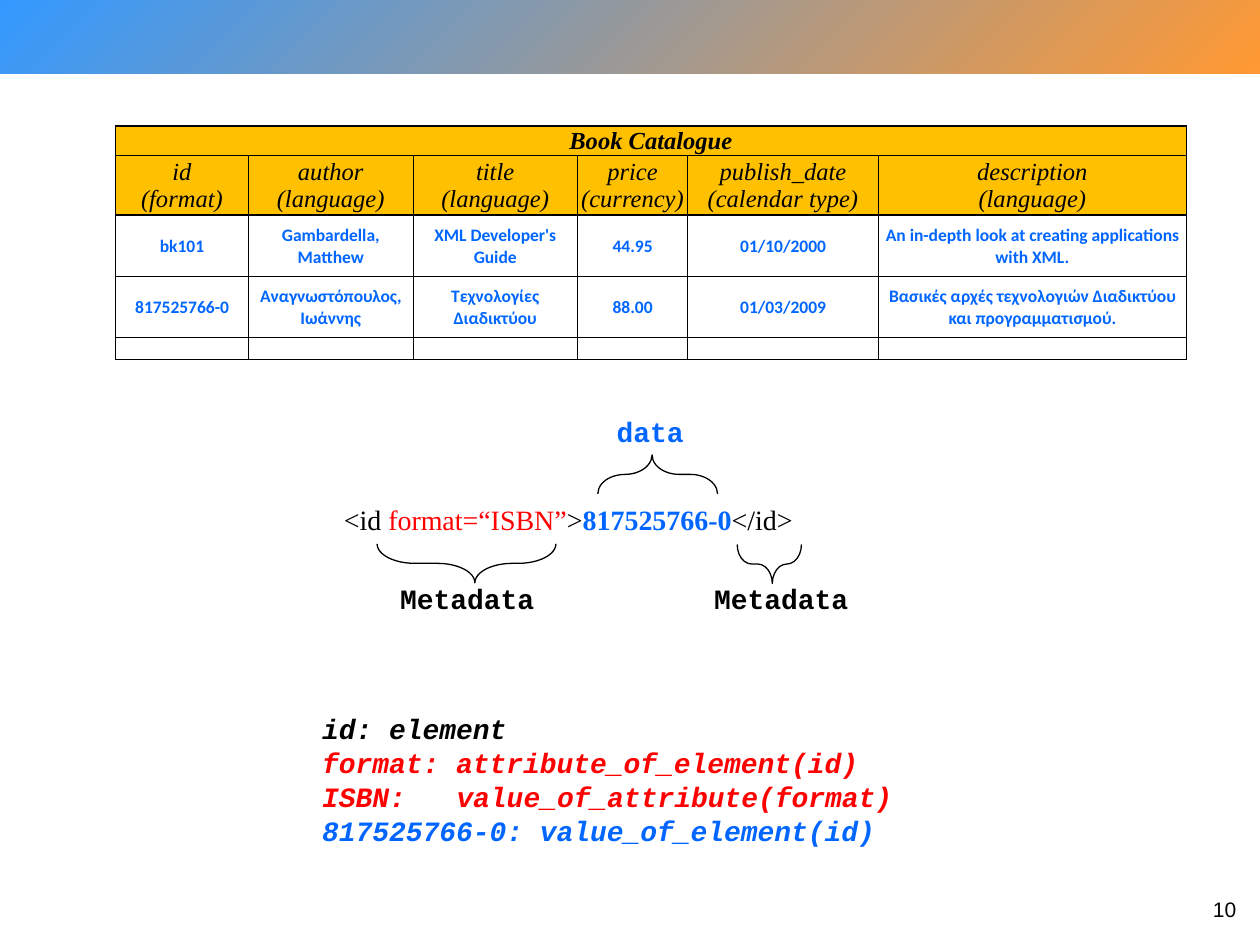
from lxml import etree
from pptx import Presentation
from pptx import util as u
from pptx.dml.color import RGBColor
from pptx.enum import shapes, text
from pptx.oxml import ns

Pt = u.Pt
BLACK = RGBColor(0x00, 0x00, 0x00)
RED = RGBColor(0xFF, 0x00, 0x00)
BLUE = RGBColor(0x00, 0x66, 0xFF)
GOLD = RGBColor(0xFF, 0xC0, 0x00)
SKY = RGBColor(0x33, 0x99, 0xFF)
ORANGE = RGBColor(0xFF, 0x99, 0x33)
SERIF, MONO = "Times New Roman", "Courier New"
CENTER, LEFT, RIGHT = text.PP_ALIGN.CENTER, text.PP_ALIGN.LEFT, text.PP_ALIGN.RIGHT

COLUMN_WIDTHS = [76, 94, 94, 63, 109, 176]
ROW_HEIGHTS = [17, 34, 35, 35, 12.5]
CATALOGUE = [
    ["Book Catalogue"],
    ["id\n(format)", "author\n(language)", "title\n(language)", "price\n(currency)",
     "publish_date\n(calendar type)", "description\n(language)"],
    ["bk101", "Gambardella, Matthew", "XML Developer's Guide", "44.95", "01/10/2000",
     "An in-depth look at creating applications\nwith XML."],
    ["817525766-0", "Αναγνωστόπουλος, Ιωάννης", "Τεχνολογίες Διαδικτύου", "88.00",
     "01/03/2009", "Βασικές αρχές τεχνολογιών Διαδικτύου και προγραμματισμού."],
]


def write(paragraph, content, *, font=MONO, size=16, color=BLACK, bold=False,
          italic=False, align=LEFT, spacing=None, before=None):
    paragraph.alignment = align
    if spacing:
        paragraph.line_spacing = spacing
    if before:
        paragraph.space_before = Pt(before)
    run = paragraph.add_run()
    run.text = content
    run.font.name = font
    run.font.size = Pt(size)
    run.font.color.rgb = color
    run.font.bold = bold
    run.font.italic = italic


def add_text_frame(slide, left, top, width, height):
    box = slide.shapes.add_textbox(Pt(left), Pt(top), Pt(width), Pt(height))
    box.text_frame.word_wrap = True
    return box.text_frame


def add_lines(frame, lines, **style):
    for index, (content, changes) in enumerate(lines):
        paragraph = frame.add_paragraph() if index else frame.paragraphs[0]
        write(paragraph, content, **{**style, **changes})


def set_borders(cell, widths):
    properties = cell._tc.get_or_add_tcPr()
    for index, (side, width) in enumerate(widths.items()):
        line = etree.Element(ns.qn(f"a:ln{side}"), w=str(Pt(width)))
        fill = etree.SubElement(line, ns.qn("a:solidFill"))
        etree.SubElement(fill, ns.qn("a:srgbClr"), val=str(BLACK))
        properties.insert(index, line)


def add_banner(slide, left, top, width, height):
    banner = slide.shapes.add_shape(
        shapes.MSO_SHAPE.RECTANGLE, Pt(left), Pt(top), Pt(width), Pt(height))
    banner.shadow.inherit = False
    banner.line.fill.background()
    banner.fill.gradient()
    banner.fill.gradient_angle = 315
    for stop, color, position in zip(banner.fill.gradient_stops, (SKY, ORANGE), (0, 1)):
        stop.color.rgb = color
        stop.position = position


def add_catalogue(slide, left, top):
    row_count, column_count = len(ROW_HEIGHTS), len(COLUMN_WIDTHS)
    table = slide.shapes.add_table(
        row_count, column_count, Pt(left), Pt(top),
        Pt(sum(COLUMN_WIDTHS)), Pt(sum(ROW_HEIGHTS))).table
    for column, width in zip(table.columns, COLUMN_WIDTHS):
        column.width = Pt(width)
    for row, height in zip(table.rows, ROW_HEIGHTS):
        row.height = Pt(height)
    table.cell(0, 0).merge(table.cell(0, column_count - 1))
    body = dict(font="Calibri", size=10, color=BLUE, bold=True)
    styles = [dict(font=SERIF, size=14, bold=True, italic=True),
              dict(font=SERIF, size=14, italic=True), body, body]
    for row in range(row_count):
        for column in range(column_count):
            cell = table.cell(row, column)
            cell.margin_left = cell.margin_right = cell.margin_top = Pt(0.72)
            cell.margin_bottom = 0
            cell.vertical_anchor = text.MSO_ANCHOR.MIDDLE
            if row < 2:
                cell.fill.solid()
                cell.fill.fore_color.rgb = GOLD
            else:
                cell.fill.background()
            set_borders(cell, {
                "L": 1 if column == 0 else 0.5,
                "R": 1 if row == 0 or column == column_count - 1 else 0.5,
                "T": 1 if row in (0, 2) else 0.5,
                "B": 1 if row == 1 else 0.5})
            if row < len(CATALOGUE) and column < len(CATALOGUE[row]):
                lines = [(line, {}) for line in CATALOGUE[row][column].split("\n")]
                add_lines(cell.text_frame, lines, align=CENTER, **styles[row])
            else:
                etree.SubElement(cell.text_frame.paragraphs[0]._p,
                                 ns.qn("a:endParaRPr"), sz="800")


def add_brace(slide, center_x, center_y, span, rotation):
    depth = 22.3
    brace = slide.shapes.add_shape(
        shapes.MSO_SHAPE.LEFT_BRACE, Pt(center_x - depth / 2), Pt(center_y - span / 2),
        Pt(depth), Pt(span))
    brace.rotation = rotation
    brace.adjustments[0] = 0.96
    brace.adjustments[1] = 0.547
    brace.shadow.inherit = False
    brace.fill.background()
    brace.line.color.rgb = BLACK
    brace.line.width = Pt(0.75)


def add_markup_diagram(slide, left, top, width):
    line_style = dict(align=CENTER, spacing=0.8, before=4)
    paragraph = add_text_frame(slide, left, top + 50.4, width, 23).paragraphs[0]
    for content, color, bold in (("<id ", BLACK, False), ("format=“ISBN”", RED, False),
                                 (">", BLACK, False), ("817525766-0", BLUE, True),
                                 ("</id>", BLACK, False)):
        write(paragraph, content, font=SERIF, color=color, bold=bold, **line_style)
    parts = [("Metadata", BLACK, 226, 95.8, 225.6, 85, 102.2, 270),
             ("Metadata", BLACK, 405.4, 95.8, 398.6, 85.4, 36.7, 270),
             ("data", BLUE, 330.5, 0, 334.8, 34.2, 68.4, 90)]
    for label, color, label_x, label_y, brace_x, brace_y, span, rotation in parts:
        add_brace(slide, left + brace_x, top + brace_y, span, rotation)
        frame = add_text_frame(slide, left + label_x - 54, top + label_y, 108, 23)
        write(frame.paragraphs[0], label, color=color, bold=True, **line_style)


def add_legend(slide, left, top, width, height):
    frame = add_text_frame(slide, left, top, width, height)
    lines = [("id: element", {}),
             ("format: attribute_of_element(id)", dict(color=RED)),
             ("ISBN:\tvalue_of_attribute(format)", dict(color=RED)),
             ("817525766-0: value_of_element(id)", dict(color=BLUE))]
    add_lines(frame, lines, bold=True, italic=True, spacing=0.8, before=4)
    properties = frame.paragraphs[2]._p.get_or_add_pPr()
    tabs = etree.SubElement(properties, ns.qn("a:tabLst"))
    etree.SubElement(tabs, ns.qn("a:tab"), pos=str(Pt(76.8)), algn="l")


def add_slide_number(slide, left, top, width, height):
    frame = add_text_frame(slide, left, top, width, height)
    frame.vertical_anchor = text.MSO_ANCHOR.MIDDLE
    write(frame.paragraphs[0], "10", font="Arial", size=12, align=RIGHT)


def main():
    presentation = Presentation()
    presentation.slide_width, presentation.slide_height = Pt(720), Pt(540)
    slide = presentation.slides.add_slide(presentation.slide_layouts[6])
    add_banner(slide, 0, 0, 720, 42)
    add_catalogue(slide, 66, 72)
    add_markup_diagram(slide, 41, 236.9, 567.4)
    add_legend(slide, 177, 406.8, 368.6, 108)
    add_slide_number(slide, 683.3, 505, 30.2, 28.8)
    presentation.save("out.pptx")


if __name__ == "__main__":
    main()
